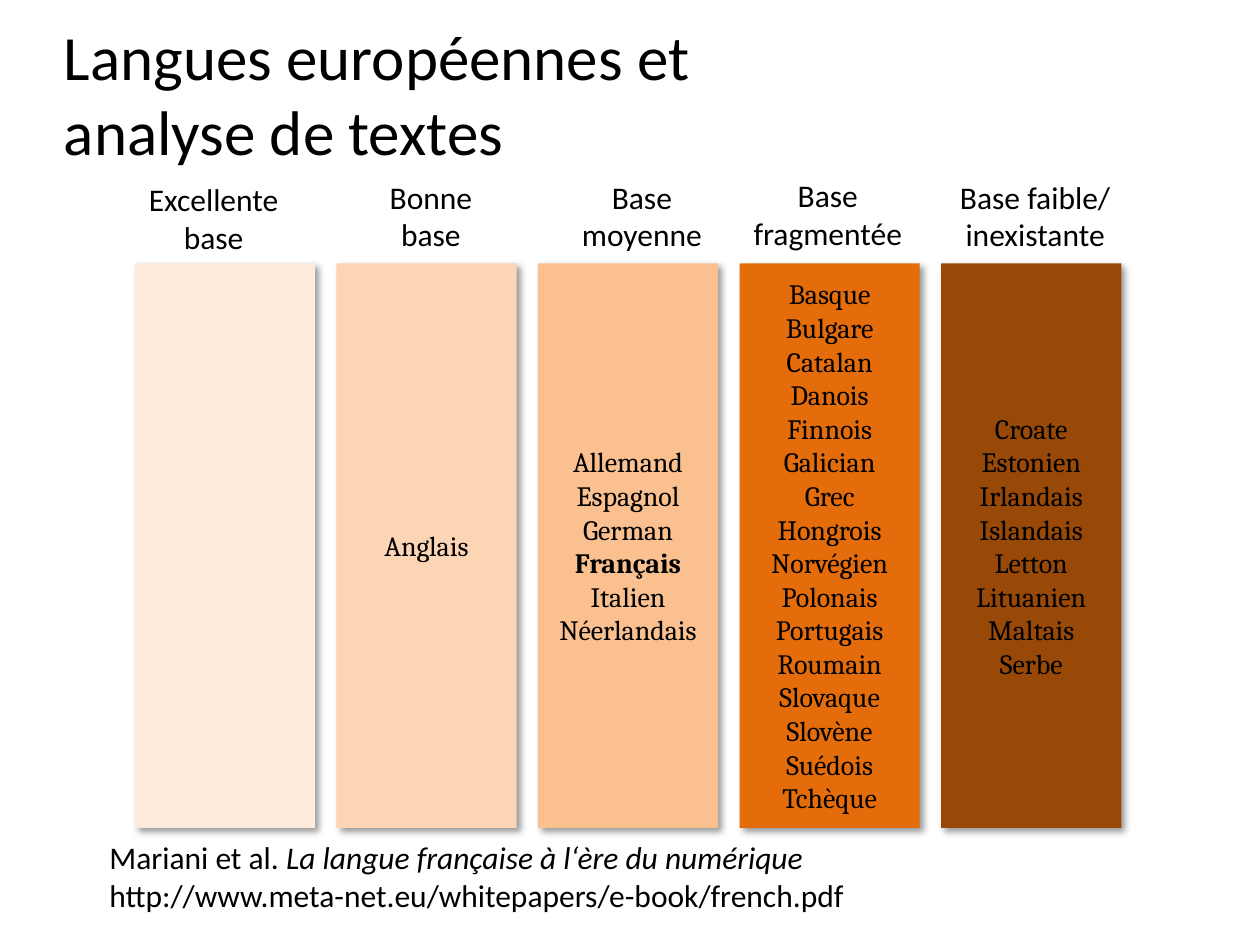
from lxml import etree
from pptx import Presentation
from pptx import util as u
from pptx.dml.color import RGBColor
from pptx.enum import shapes, text
from pptx.oxml import ns

COLUMN_LEFT, COLUMN_STEP = 1.07, 1.6
COLUMN_TOP, COLUMN_WIDTH, COLUMN_HEIGHT = 2.09, 1.43, 4.48
HIGHLIGHTED = "Français"

COLUMNS = [
    ("FDEADA", ["Excellente", "base"], (1.07, 1.38, 1.25), []),
    ("FCD5B5", ["Bonne", "base"], (2.99, 1.36, 0.86), ["Anglais"]),
    ("FAC090", ["Base", "moyenne"], (4.51, 1.36, 1.17),
     ["Allemand", "Espagnol", "German", "Français", "Italien", "Néerlandais"]),
    ("E46C0A", ["Base", "fragmentée"], (5.87, 1.35, 1.4),
     ["Basque", "Bulgare", "Catalan", "Danois", "Finnois", "Galician", "Grec", "Hongrois",
      "Norvégien", "Polonais", "Portugais", "Roumain", "Slovaque", "Slovène", "Suédois",
      "Tchèque"]),
    ("984807", ["Base faible/", "inexistante"], (7.47, 1.36, 1.49),
     ["Croate", "Estonien", "Irlandais", "Islandais", "Letton", "Lituanien", "Maltais",
      "Serbe"]),
]


def colour(value):
    return RGBColor.from_string(value)


class SlideBuilder:
    title = {"name": "Calibri", "size": u.Pt(36)}
    body = {"name": "Calibri", "size": u.Pt(18)}
    language = {"name": "Cambria", "size": u.Pt(16)}
    text_colour = "000000"

    def __init__(self, slide):
        self.slide = slide

    def add_lines(self, frame, lines, style, alignment):
        for index, runs in enumerate(lines):
            paragraph = frame.paragraphs[0] if index == 0 else frame.add_paragraph()
            paragraph.alignment = alignment
            for content, extra in runs:
                for part_index, part in enumerate(content.split("\n")):
                    if part_index:
                        paragraph.add_line_break()
                    run = paragraph.add_run()
                    run.text = part
                    for name, value in {**style, **extra}.items():
                        setattr(run.font, name, value)
                    run.font.color.rgb = colour(self.text_colour)

    def text_box(self, box, lines, style, alignment=text.PP_ALIGN.LEFT, **frame_format):
        shape = self.slide.shapes.add_textbox(*map(u.Inches, box))
        for name, value in {"word_wrap": True, **frame_format}.items():
            setattr(shape.text_frame, name, value)
        self.add_lines(shape.text_frame, lines, style, alignment)

    def heading(self, place, lines, wrap):
        self.text_box((*place, 0.71), [[(line, {})] for line in lines], self.body,
                      text.PP_ALIGN.CENTER, word_wrap=wrap,
                      auto_size=text.MSO_AUTO_SIZE.SHAPE_TO_FIT_TEXT)

    def column(self, left, fill, languages):
        box = (left, COLUMN_TOP, COLUMN_WIDTH, COLUMN_HEIGHT)
        shape = self.slide.shapes.add_shape(shapes.MSO_SHAPE.RECTANGLE, *map(u.Inches, box))
        shape.fill.solid()
        shape.fill.fore_color.rgb = colour(fill)
        shape.line.fill.background()
        self.shadow(shape)
        shape.text_frame.vertical_anchor = text.MSO_ANCHOR.MIDDLE
        lines = [[(name, {"bold": name == HIGHLIGHTED})] for name in languages]
        self.add_lines(shape.text_frame, lines, self.language, text.PP_ALIGN.CENTER)

    def shadow(self, shape):
        shape.shadow.inherit = False
        effects = shape._element.spPr.find(ns.qn("a:effectLst"))
        outer = etree.SubElement(effects, ns.qn("a:outerShdw"), blurRad=str(u.Pt(4)),
                                 dist=str(u.Pt(3)), dir=str(45 * 60000),
                                 algn="tl", rotWithShape="0")
        tint = etree.SubElement(outer, ns.qn("a:srgbClr"), val="000000")
        etree.SubElement(tint, ns.qn("a:alpha"), val="40000")


def main():
    presentation = Presentation()
    presentation.slide_width, presentation.slide_height = u.Inches(10), u.Inches(7.5)
    builder = SlideBuilder(presentation.slides.add_slide(presentation.slide_layouts[6]))

    builder.text_box((0.41, 0.11, 9, 1.25),
                     [[("Langues européennes et \nanalyse de textes", {})]],
                     builder.title, vertical_anchor=text.MSO_ANCHOR.MIDDLE)
    for index, (fill, heading, place, languages) in enumerate(COLUMNS):
        builder.column(COLUMN_LEFT + index * COLUMN_STEP, fill, languages)
        builder.heading(place, heading, wrap=index == len(COLUMNS) - 1)
    builder.text_box((0.77, 6.6, 6.51, 1.01), [
        [("Mariani et al. ", {}), ("La langue française à l‘ère du numérique", {"italic": True})],
        [("http://www.meta-net.eu/whitepapers/e-book/french.pdf", {})],
    ], builder.body, auto_size=text.MSO_AUTO_SIZE.SHAPE_TO_FIT_TEXT)

    presentation.save("out.pptx")


if __name__ == "__main__":
    main()
